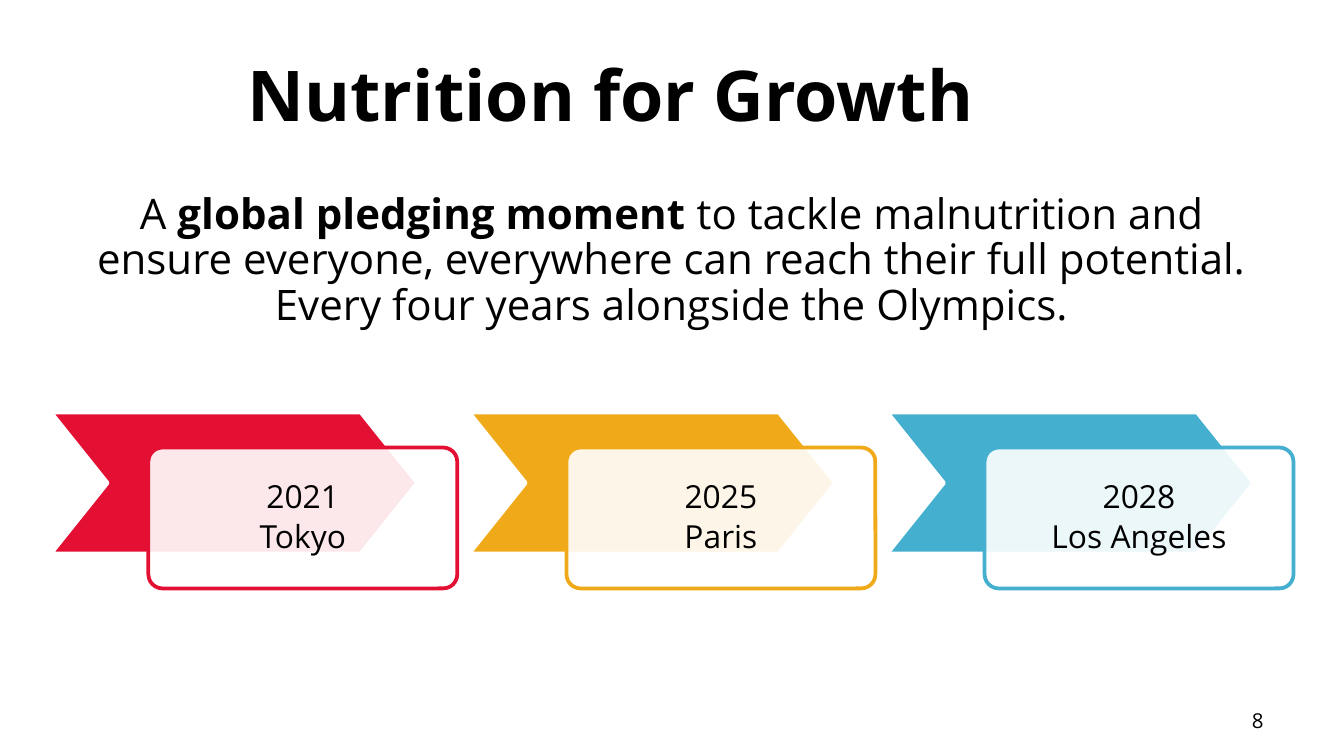
from lxml.etree import SubElement
from pptx import Presentation
from pptx.dml.color import RGBColor
from pptx.enum.shapes import MSO_SHAPE as Preset
from pptx.enum.text import MSO_ANCHOR as Anchor, PP_ALIGN as Align
from pptx.oxml.ns import qn
from pptx.util import Pt


def color(hex_value):
    return RGBColor.from_string(hex_value)


def write(shape, paragraphs, size, align, frame_format, paragraph_format):
    frame = shape.text_frame
    for key, value in {"word_wrap": True, **frame_format}.items():
        setattr(frame, key, value)
    for index, runs in enumerate(paragraphs):
        paragraph = frame.paragraphs[0] if index == 0 else frame.add_paragraph()
        for key, value in {"alignment": align, **paragraph_format}.items():
            setattr(paragraph, key, value)
        for text, bold in runs:
            run = paragraph.add_run()
            run.text = text
            for key, value in {"name": "Open Sans", "size": Pt(size), "bold": bold}.items():
                setattr(run.font, key, value)
            run.font.color.rgb = color("000000")


presentation = Presentation()
presentation.slide_width, presentation.slide_height = Pt(720), Pt(405)
slide = presentation.slides.add_slide(presentation.slide_layouts[6])
shapes = slide.shapes

heading = shapes.add_textbox(Pt(36), Pt(16.5), Pt(582.5), Pt(67.5))
write(heading, [[("Nutrition for Growth", True)]], 37.5, Align.CENTER,
      {"vertical_anchor": Anchor.MIDDLE}, {})

summary = shapes.add_textbox(Pt(36), Pt(100), Pt(648), Pt(110))
write(summary, [[
    ("A", False),
    (" global pledging moment ", True),
    ("to tackle malnutrition and ensure everyone, everywhere can reach their full potential. "
     "Every four years alongside the Olympics.", False),
]], 22.5, Align.CENTER, {"vertical_anchor": Anchor.TOP}, {"line_spacing": 0.9})

summits = [
    ("2021", "Tokyo", "E41034"),
    ("2025", "Paris", "F0AA19"),
    ("2028", "Los Angeles", "45AFD0"),
]
card_inset = Pt(9.5)
for index, (year, city, accent) in enumerate(summits):
    left = 27.5 + 224 * index
    arrow = shapes.add_shape(Preset.CHEVRON, Pt(left), Pt(221), Pt(196), Pt(75.5))
    card = shapes.add_shape(Preset.ROUNDED_RECTANGLE, Pt(left + 52), Pt(239.75), Pt(165.5), Pt(75.5))
    for part, adjustment, fill, outline in (
        (arrow, 0.4, accent, "FFFFFF"),
        (card, 0.1, "FFFFFF", accent),
    ):
        part.adjustments[0] = adjustment
        part.shadow.inherit = False
        part.fill.solid()
        part.fill.fore_color.rgb = color(fill)
        part.line.color.rgb = color(outline)
        part.line.width = Pt(2)
    card_fill = card.fill._xPr.find(qn("a:solidFill"))[0]
    SubElement(card_fill, qn("a:alpha"), val="90000")
    write(card, [[(year, False)], [(city, False)]], 17, Align.CENTER,
          {"vertical_anchor": Anchor.MIDDLE, "margin_left": card_inset, "margin_right": card_inset,
           "margin_top": card_inset, "margin_bottom": card_inset},
          {"line_spacing": 0.9, "space_after": Pt(3.3)})

page_number = shapes.add_textbox(Pt(516), Pt(375), Pt(168), Pt(21.5))
write(page_number, [[("8", False)]], 11, Align.RIGHT, {"vertical_anchor": Anchor.MIDDLE}, {})

presentation.save("out.pptx")
